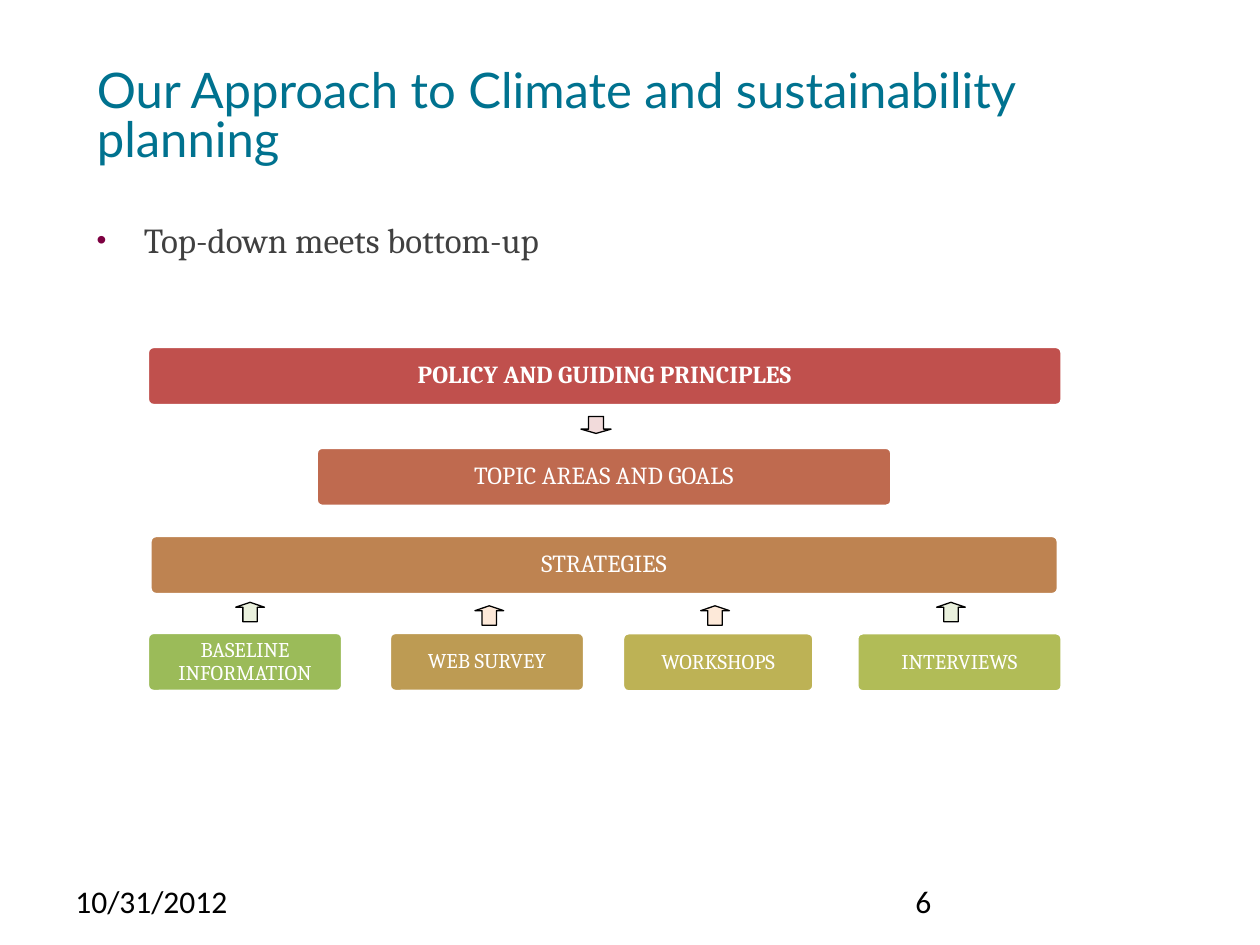
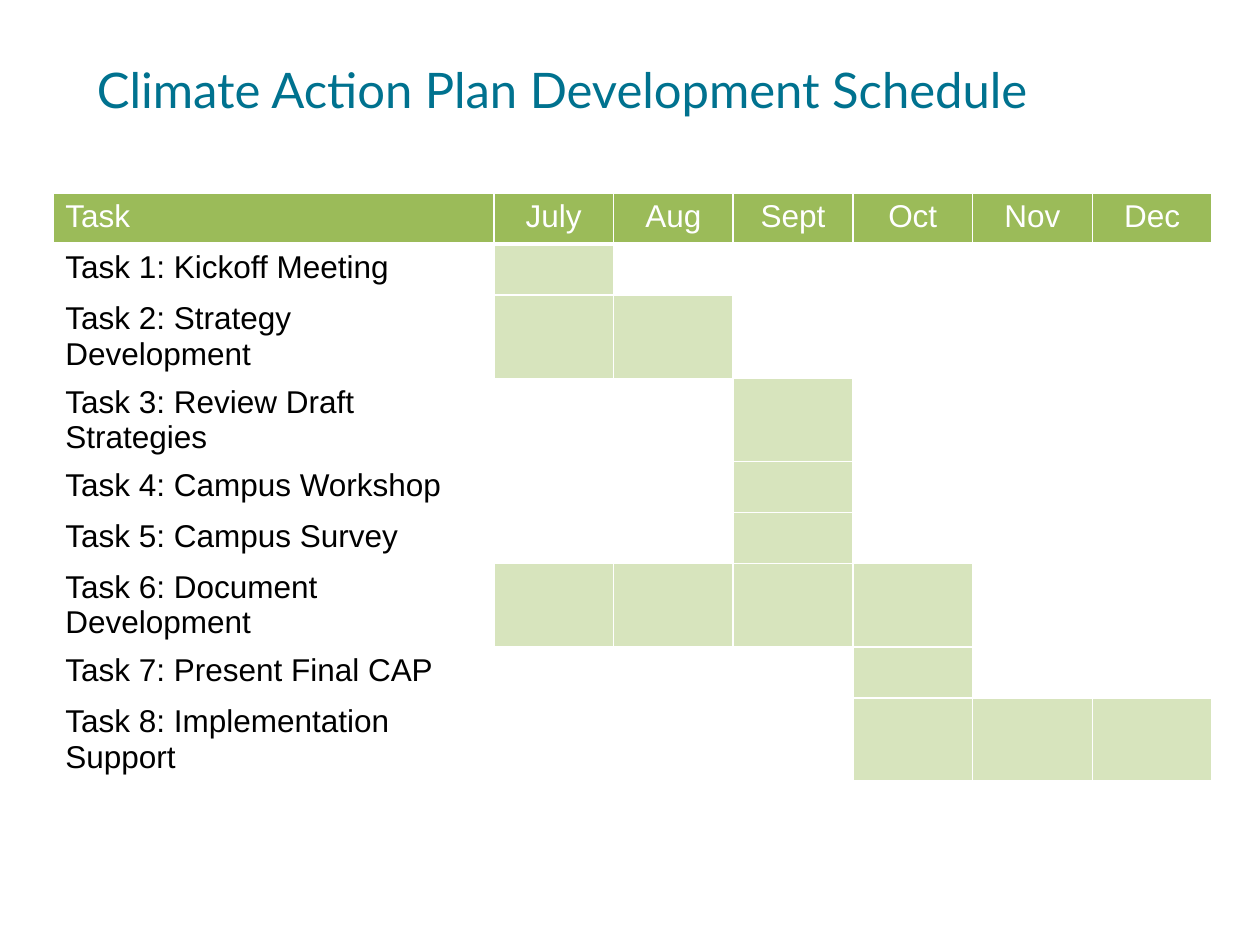
import dataclasses

import pptx
import pptx.dml.color
import pptx.enum.shapes
import pptx.enum.text
import pptx.oxml
import pptx.oxml.ns
import pptx.util

Pt = pptx.util.Pt
SHAPE = pptx.enum.shapes.MSO_SHAPE
ALIGN = pptx.enum.text.PP_ALIGN
ANCHOR = pptx.enum.text.MSO_ANCHOR


@dataclasses.dataclass(frozen=True)
class Theme:
    """Colours, fonts and type sizes of the deck."""
    white: str = "FFFFFF"
    black: str = "000000"
    teal: str = "00728F"
    plum: str = "7D0041"
    gray: str = "404040"
    green: str = "9BBB59"
    pale: str = "D7E4BD"
    head: str = "Lato"
    serif: str = "Cambria"
    plain: str = "Calibri"
    grid: str = "Arial"
    title: int = 28
    body: int = 20
    base: int = 18
    bar: int = 14
    small: int = 12


THEME = Theme()

BARS = [
    ("POLICY AND GUIDING PRINCIPLES", 84.24, 198, 522.7, "C0504D", THEME.bar, True),
    ("TOPIC AREAS AND GOALS", 180.7, 255.6, 329, "BF6A4F", THEME.bar, False),
    ("STRATEGIES", 85.7, 306, 519.1, "BE8351", THEME.bar, False),
    ("BASELINE INFORMATION", 84.24, 361.4, 111.6, THEME.green, THEME.small, False),
    ("WEB SURVEY", 222.5, 361.4, 111.6, "BD9B53", THEME.small, False),
    ("WORKSHOPS", 355.7, 361.6, 109.4, "BDB255", THEME.small, False),
    ("INTERVIEWS", 489.6, 361.6, 117.4, "B1BC57", THEME.small, False),
]
RISES = [
    (134.7, 344.2, "EAF1DD"),
    (271.4, 346.2, "FDE9D9"),
    (400.4, 346.2, "FDE9D9"),
    (535.2, 344.2, "EAF1DD"),
]
MONTHS = ["July", "Aug", "Sept", "Oct", "Nov", "Dec"]
TASKS = [
    ("Task 1: Kickoff Meeting", "July", "July"),
    ("Task 2: Strategy Development", "July", "Aug"),
    ("Task 3: Review Draft Strategies", "Sept", "Sept"),
    ("Task 4: Campus Workshop", "Sept", "Sept"),
    ("Task 5: Campus Survey", "Sept", "Sept"),
    ("Task 6: Document Development", "July", "Oct"),
    ("Task 7: Present Final CAP", "Oct", "Oct"),
    ("Task 8: Implementation Support", "Oct", "Dec"),
]


def tint(hue):
    """Turn a hex string into a colour."""
    return pptx.dml.color.RGBColor.from_string(hue)


def paint(fill, hue):
    """Give a fill one solid colour."""
    fill.solid()
    fill.fore_color.rgb = tint(hue)


def node(xml):
    """Parse one drawing element, with its namespace filled in."""
    space = pptx.oxml.ns.nsdecls("a")
    return pptx.oxml.parse_xml(xml.replace("NS", space, 1))


def write(frame, text, *, font, size, hue, bold=False, align=ALIGN.LEFT,
          lead=None, dot=None):
    """Write one formatted paragraph into a text frame."""
    frame.text = text
    para = frame.paragraphs[0]
    para.alignment = align
    if lead:
        para.line_spacing = lead
    if dot:
        props = para._p.get_or_add_pPr()
        props.set("marL", str(Pt(27)))
        props.set("indent", str(Pt(-27)))
        for xml in (f'<a:buClr NS><a:srgbClr val="{dot}"/></a:buClr>',
                    '<a:buSzPct NS val="80000"/>',
                    '<a:buFont NS typeface="Arial"/>',
                    '<a:buChar NS char="•"/>'):
            props.append(node(xml))
    face = para.runs[0].font
    face.name, face.size, face.bold = font, Pt(size), bold
    face.color.rgb = tint(hue)


def start(deck, text):
    """Add a title-only slide with its title in place."""
    slide = deck.slides.add_slide(deck.slide_layouts[5])
    title = slide.shapes.title
    title.left, title.top = Pt(48.2), Pt(36)
    title.width, title.height = Pt(635.8), Pt(48.2)
    frame = title.text_frame
    frame.word_wrap = True
    frame.auto_size = pptx.enum.text.MSO_AUTO_SIZE.NONE
    frame.vertical_anchor = ANCHOR.TOP
    write(frame, text, font=THEME.head, size=THEME.title, hue=THEME.teal,
          lead=Pt(28))
    return slide


def label(slide, text, left, top, width, height, **look):
    """Add a wrapping text box."""
    box = slide.shapes.add_textbox(Pt(left), Pt(top), Pt(width), Pt(height))
    box.text_frame.word_wrap = True
    write(box.text_frame, text, **look)


def draw(slide, kind, left, top, width, height, hue, edge, weight, *bends):
    """Add a filled and outlined preset shape."""
    shape = slide.shapes.add_shape(kind, Pt(left), Pt(top), Pt(width), Pt(height))
    shape.shadow.inherit = False
    paint(shape.fill, hue)
    shape.line.color.rgb = tint(edge)
    shape.line.width = Pt(weight)
    for spot, bend in enumerate(bends):
        shape.adjustments[spot] = bend
    return shape


def block(slide, text, left, top, width, hue, size, bold):
    """Add a rounded bar with a centred label."""
    shape = draw(slide, SHAPE.ROUNDED_RECTANGLE, left, top, width, 33.8, hue,
                 THEME.white, 2, 0.1)
    frame = shape.text_frame
    frame.word_wrap = True
    frame.vertical_anchor = ANCHOR.MIDDLE
    frame.margin_left = frame.margin_right = Pt(3)
    frame.margin_top = frame.margin_bottom = Pt(3)
    write(frame, text, font=THEME.serif, size=size, hue=THEME.white, bold=bold,
          align=ALIGN.CENTER, lead=0.9)


def arrow(slide, kind, left, top, width, height, hue):
    """Add a small block arrow."""
    draw(slide, kind, left, top, width, height, hue, THEME.black, 0.75, 0.5, 0.25)


def style(cell, hue, base=1):
    """Fill a cell and rule its four sides in white."""
    props = cell._tc.get_or_add_tcPr()
    for side, weight in (("L", 1), ("R", 1), ("T", 1), ("B", base)):
        props.append(node(
            f'<a:ln{side} NS w="{Pt(weight)}"><a:solidFill>'
            f'<a:srgbClr val="{THEME.white}"/></a:solidFill></a:ln{side}>'))
    paint(cell.fill, hue)


def chart(slide, left, top):
    """Add the month-by-month task table."""
    rows, cols = len(TASKS) + 1, len(MONTHS) + 1
    wide, slim, high = 252, 68.4, 29.2
    frame = slide.shapes.add_table(rows, cols, Pt(left), Pt(top),
                                   Pt(wide + slim * len(MONTHS)), Pt(high * rows))
    table = frame.table
    table.horz_banding = False
    for spot, col in enumerate(table.columns):
        col.width = Pt(slim if spot else wide)
    look = dict(font=THEME.grid, size=THEME.base)
    for spot, text in enumerate(["Task"] + MONTHS):
        cell = table.cell(0, spot)
        style(cell, THEME.green, 3)
        write(cell.text_frame, text, hue=THEME.white,
              align=ALIGN.CENTER if spot else ALIGN.LEFT, **look)
    for row, (task, first, last) in enumerate(TASKS, 1):
        style(table.cell(row, 0), THEME.white)
        write(table.cell(row, 0).text_frame, task, hue=THEME.black, **look)
        span = range(MONTHS.index(first), MONTHS.index(last) + 1)
        for month in range(len(MONTHS)):
            style(table.cell(row, month + 1),
                  THEME.pale if month in span else THEME.white)


def plan(deck):
    """Build the slide on the planning approach."""
    slide = start(deck, "Our Approach to Climate and sustainability planning")
    label(slide, "Top-down meets bottom-up", 48.2, 121.5, 635.8, 36,
          font=THEME.serif, size=THEME.body, hue=THEME.gray, dot=THEME.plum)
    for text, left in (("10/31/2012", 36), ("6", 516)):
        label(slide, text, left, 500.4, 168, 29, font=THEME.plain,
              size=THEME.base, hue=THEME.black)
    for bar in BARS:
        block(slide, *bar)
    arrow(slide, SHAPE.DOWN_ARROW, 332, 238, 17.2, 9.7, "F2DBDB")
    for left, top, hue in RISES:
        arrow(slide, SHAPE.UP_ARROW, left, top, 16.4, 11.1, hue)


def dates(deck):
    """Build the slide with the schedule."""
    slide = start(deck, "Climate Action Plan Development Schedule")
    chart(slide, 30.2, 110.2)


def main():
    """Build and save the deck."""
    deck = pptx.Presentation()
    deck.slide_width, deck.slide_height = Pt(720), Pt(540)
    plan(deck)
    dates(deck)
    deck.save("out.pptx")


if __name__ == "__main__":
    main()
